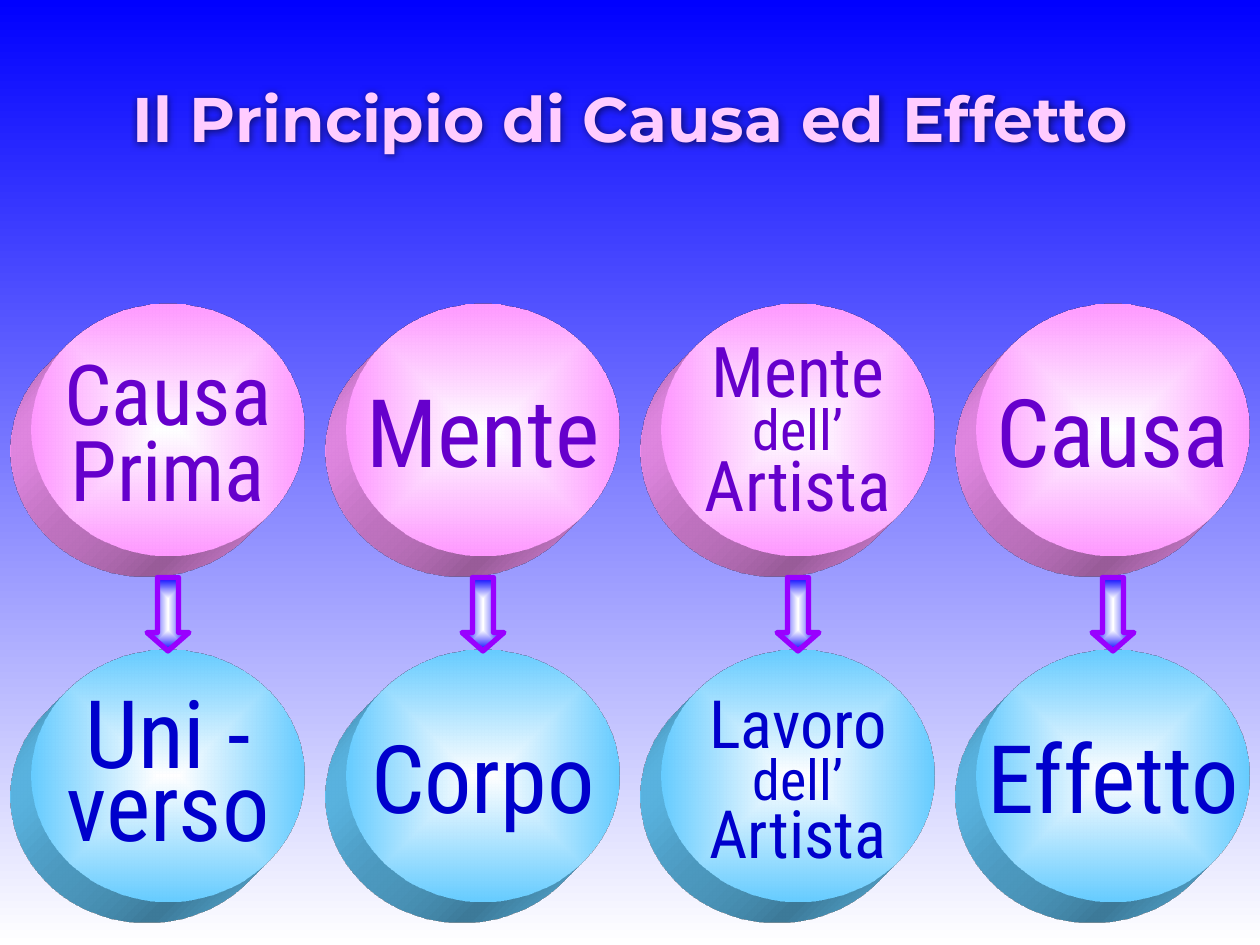
from dataclasses import dataclass

from lxml import etree
from pptx import Presentation
from pptx import util as u
from pptx.dml.color import RGBColor
from pptx.enum import shapes, text
from pptx.oxml import ns, parse_xml

SCALE = 7620  # EMU in one px, 120 px to the inch


@dataclass(frozen=True)
class Theme:
    sky: tuple = ("0000FF", "FFFFFF")
    cause: tuple = ("FFFFFF", "FF99FF")
    effect: tuple = ("FFFFFF", "66CCFF")
    arrow: tuple = ("FFFFFF", "0000FF")
    arrow_line: str = "9900FF"
    cause_text: str = "6600CC"
    effect_text: str = "0000CC"
    title_text: str = "FFCCFF"
    title_line: str = "000099"
    title_font: str = "Montserrat"
    body_font: str = "Roboto Condensed"
    title_size: int = 36


def px(value):
    return u.Emu(value * SCALE)


def apply(target, values):
    for name, value in values.items():
        setattr(target, name, value)


def drawing_xml(markup):
    head, rest = markup.split(" ", 1)
    return parse_xml(f"{head} {ns.nsdecls('a')} {rest}")


class SlideBuilder:
    def __init__(self, presentation, theme):
        self.theme = theme
        self.slide = presentation.slides.add_slide(presentation.slide_layouts[5])

    def gradient(self, fill, colours):
        """Two-colour gradient running downwards."""
        fill.gradient()
        for stop, colour in zip(fill.gradient_stops, colours):
            stop.color.rgb = RGBColor.from_string(colour)
        fill.gradient_angle = 270

    def centre_gradient(self, shape, colours, outline):
        """Two-colour gradient running outwards from the centre."""
        self.gradient(shape.fill, colours)
        linear = shape._element.spPr.find(".//" + ns.qn("a:lin"))
        linear.getparent().replace(linear, drawing_xml(
            f'<a:path path="{outline}"><a:fillToRect l="50000" t="50000" '
            'r="50000" b="50000"/></a:path>'))

    def background(self):
        self.gradient(self.slide.background.fill, self.theme.sky)

    def add_text(self, paragraph, words, font, size, colour, bold=False):
        paragraph.alignment = text.PP_ALIGN.CENTER
        run = paragraph.add_run()
        run.text = words
        apply(run.font, {"name": font, "size": u.Pt(size), "bold": bold})
        run.font.color.rgb = RGBColor.from_string(colour)
        return run

    def title(self, words, left, top, width, height):
        theme, title = self.theme, self.slide.shapes.title
        apply(title, {"left": px(left), "top": px(top),
                      "width": px(width), "height": px(height)})
        apply(title.text_frame, {"word_wrap": False,
                                 "auto_size": text.MSO_AUTO_SIZE.NONE,
                                 "vertical_anchor": text.MSO_ANCHOR.TOP})
        run = self.add_text(title.text_frame.paragraphs[0], words, theme.title_font,
                            theme.title_size, theme.title_text, bold=True)
        # Outline of the letters and the dark halo behind them
        run.font._element.insert(0, drawing_xml(
            f'<a:ln w="{u.Pt(3)}"><a:solidFill><a:srgbClr val="{theme.title_line}"/>'
            '</a:solidFill></a:ln>'))
        title._element.spPr.append(drawing_xml(
            '<a:effectLst ><a:outerShdw blurRad="63500" dist="0" dir="0">'
            '<a:srgbClr val="000000"><a:alpha val="60000"/></a:srgbClr>'
            '</a:outerShdw></a:effectLst>'))

    def disc(self, left, top, width, height, lines, colours, ink,
             spacing=1.0, drop=0):
        disc = self.slide.shapes.add_shape(
            shapes.MSO_SHAPE.OVAL, *map(px, (left, top, width, height)))
        disc.shadow.inherit = False
        disc.line.fill.background()
        self.centre_gradient(disc, colours, "shape")
        self.extrude(disc, colours[1])
        frame = disc.text_frame
        apply(frame, {"word_wrap": False, "margin_top": px(6 + drop),
                      "vertical_anchor": text.MSO_ANCHOR.MIDDLE})
        for index, (words, size) in enumerate(lines):
            paragraph = frame.add_paragraph() if index else frame.paragraphs[0]
            paragraph.line_spacing = spacing
            self.add_text(paragraph, words, self.theme.body_font, size, ink)

    def extrude(self, shape, colour):
        properties = shape._element.spPr
        scene = etree.SubElement(properties, ns.qn("a:scene3d"))
        etree.SubElement(scene, ns.qn("a:camera"), prst="legacyObliqueBottomLeft")
        etree.SubElement(scene, ns.qn("a:lightRig"), rig="legacyFlat3", dir="b")
        solid = etree.SubElement(properties, ns.qn("a:sp3d"),
                                 extrusionH="430200", prstMaterial="legacyMatte")
        side = etree.SubElement(solid, ns.qn("a:extrusionClr"))
        etree.SubElement(side, ns.qn("a:srgbClr"), val=colour)

    def down_arrow(self, left, top, width, height):
        arrow = self.slide.shapes.add_shape(
            shapes.MSO_SHAPE.DOWN_ARROW, *map(px, (left, top, width, height)))
        arrow.shadow.inherit = False
        arrow.adjustments[1] = 0.44
        self.centre_gradient(arrow, self.theme.arrow, "rect")
        arrow.line.width = u.Pt(3)
        arrow.line.color.rgb = RGBColor.from_string(self.theme.arrow_line)


# Each column: cause above, effect below, as (lines, line spacing, text drop)
COLUMNS = [
    (([("Causa", 48), ("Prima", 48)], 0.75, 22),
     ([("Uni -", 54), ("verso", 54)], 0.65, 13)),
    (([("Mente", 54)], 1.0, 0),
     ([("Corpo", 54)], 1.0, 0)),
    (([("Mente", 40), ("dell’", 32), ("Artista", 40)], 0.75, 12),
     ([("Lavoro", 38), ("dell’", 32), ("Artista", 38)], 0.75, 18)),
    (([("Causa", 54)], 1.0, 0),
     ([("Effetto", 54)], 1.0, 0)),
]
FIRST_LEFT, COLUMN_STEP = 30, 300
CAUSE_TOP, ARROW_TOP, EFFECT_TOP = 289, 550, 619
DISC_WIDTH, DISC_HEIGHT = 260, 240
ARROW_WIDTH, ARROW_HEIGHT = 40, 70


def main():
    presentation = Presentation()
    apply(presentation, {"slide_width": px(1200), "slide_height": px(900)})
    theme = Theme()
    builder = SlideBuilder(presentation, theme)

    # Background and title
    builder.background()
    builder.title("Il Principio di Causa ed Effetto", 50, 70, 1100, 150)

    # Cause, arrow and effect in each column
    for index, (cause, effect) in enumerate(COLUMNS):
        left = FIRST_LEFT + index * COLUMN_STEP
        rows = ((CAUSE_TOP, cause, theme.cause, theme.cause_text),
                (EFFECT_TOP, effect, theme.effect, theme.effect_text))
        for top, (lines, spacing, drop), colours, ink in rows:
            builder.disc(left, top, DISC_WIDTH, DISC_HEIGHT, lines,
                         colours, ink, spacing, drop)
        builder.down_arrow(left + (DISC_WIDTH - ARROW_WIDTH) // 2, ARROW_TOP,
                           ARROW_WIDTH, ARROW_HEIGHT)

    presentation.save("out.pptx")


if __name__ == "__main__":
    main()
